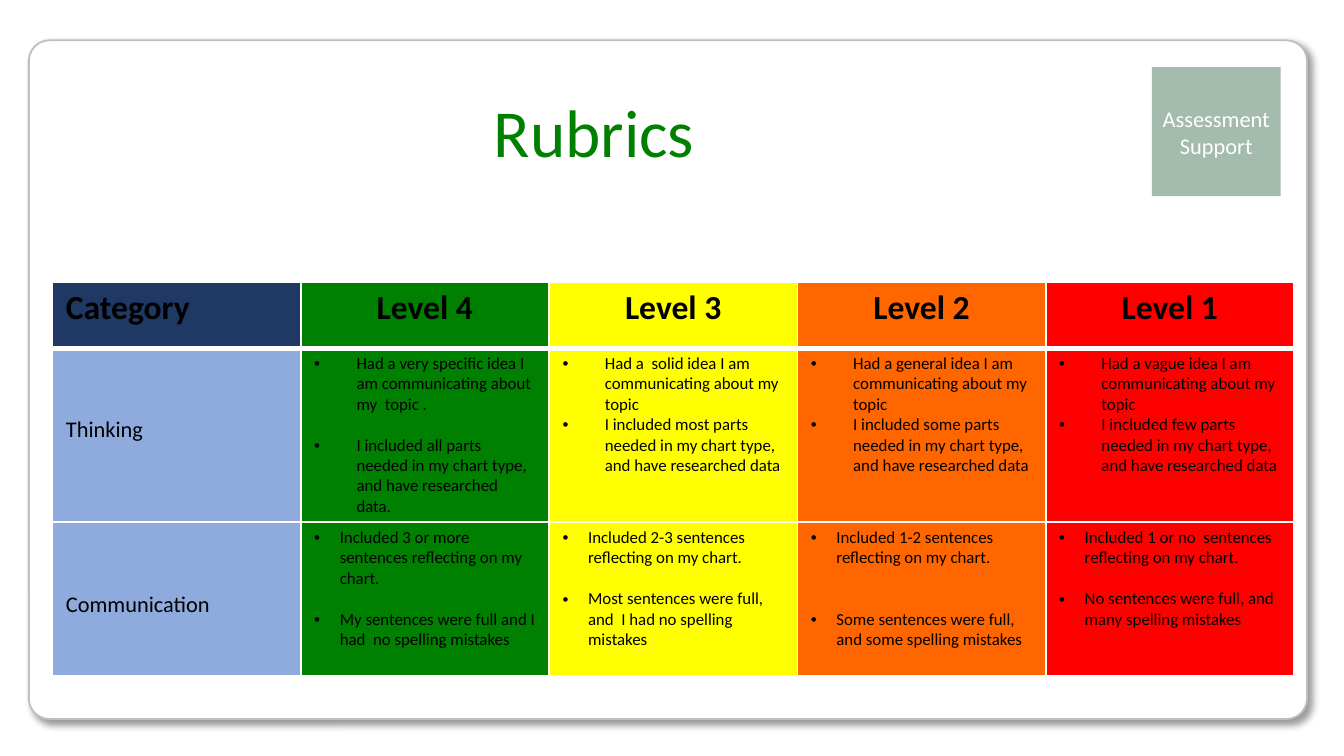
"""Build a rubric slide with a title, a support badge and a colour-coded level table."""
from dataclasses import dataclass

from lxml import etree
from pptx import Presentation
from pptx import util as u
from pptx.dml.color import RGBColor
from pptx.enum import shapes, text
from pptx.oxml.ns import qn

PX = 4572


@dataclass(frozen=True)
class Theme:
    font: str = "Calibri"
    white: str = "FFFFFF"
    black: str = "000000"
    outline: str = "BFBFBF"
    badge: str = "A3BCAD"
    title: str = "008000"
    heading: str = "203864"
    label: str = "8FAADC"
    title_size: int = 36
    heading_size: int = 18
    label_size: int = 12
    body_size: int = 9
    body_line: int = 11


@dataclass(frozen=True)
class Box:
    left: int
    top: int
    width: int
    height: int

    def emu(self) -> tuple:
        return tuple(u.Emu(n * PX) for n in (self.left, self.top, self.width, self.height))


@dataclass(frozen=True)
class Criterion:
    points: tuple
    blank_lines: int = 0


@dataclass(frozen=True)
class Level:
    name: str
    color: str
    criteria: tuple


THEME = Theme()
PAGE_WIDTH, PAGE_HEIGHT = 2000, 1125
PANEL = Box(43, 60, 1902, 1010)
BADGE = Box(1714, 100, 192, 192)
TITLE = Box(60, 124, 1648, 142)
TABLE = Box(78, 420, 1848, 564)
ROW_HEIGHTS = (98, 238, 228)
CATEGORIES = ("Thinking", "Communication")
HANGS = (63, 38)
LABEL_TOP = 102
LEVELS = (
    Level("Level 4", "008000", (
        Criterion(("Had a very specific idea I am communicating about my  topic .",
                   "I included all parts needed in my chart type, and have researched data."), 1),
        Criterion(("Included 3 or more sentences reflecting on my chart.",
                   "My sentences were full and I had  no spelling mistakes"), 1))),
    Level("Level 3", "FFFF00", (
        Criterion(("Had a  solid idea I am communicating about my  topic",
                   "I included most parts needed in my chart type, and have researched data")),
        Criterion(("Included 2-3 sentences reflecting on my chart.",
                   "Most sentences were full, and  I had no spelling mistakes"), 1))),
    Level("Level 2", "FF6600", (
        Criterion(("Had a general idea I am communicating about my  topic",
                   "I included some parts needed in my chart type, and have researched data")),
        Criterion(("Included 1-2 sentences reflecting on my chart.",
                   "Some sentences were full, and some spelling mistakes"), 2))),
    Level("Level 1", "FF0000", (
        Criterion(("Had a vague idea I am communicating about my  topic",
                   "I included few parts needed in my chart type, and have researched data")),
        Criterion(("Included 1 or no  sentences reflecting on my chart.",
                   "No sentences were full, and many spelling mistakes"), 1))),
)


def rgb(color: str) -> RGBColor:
    return RGBColor.from_string(color)


def add_element(parent, tag: str, **attributes):
    return etree.SubElement(parent, qn(tag), attributes)


def style(para, size: int, color: str, bold: bool = False, centred: bool = False) -> None:
    if centred:
        para.alignment = text.PP_ALIGN.CENTER
    for span in para.runs:
        span.font.name = THEME.font
        span.font.size = u.Pt(size)
        span.font.bold = bold
        span.font.color.rgb = rgb(color)


def set_margins(target, across: int, top: int, bottom: int) -> None:
    target.margin_left = target.margin_right = u.Emu(across * PX)
    target.margin_top = u.Emu(top * PX)
    target.margin_bottom = u.Emu(bottom * PX)


def add_shape(page, kind, box: Box, fill: str):
    shape = page.shapes.add_shape(kind, *box.emu())
    shape.shadow.inherit = False
    shape.fill.solid()
    shape.fill.fore_color.rgb = rgb(fill)
    return shape


def add_panel(page) -> None:
    panel = add_shape(page, shapes.MSO_SHAPE.ROUNDED_RECTANGLE, PANEL, THEME.white)
    panel.adjustments[0] = 0.03
    panel.line.color.rgb = rgb(THEME.outline)
    panel.line.width = u.Pt(1)
    effects = panel._element.spPr.find(qn("a:effectLst"))
    shadow = add_element(effects, "a:outerShdw", blurRad=str(u.Pt(4)), dist=str(u.Pt(3)),
                         dir="2700000", algn="tl", rotWithShape="0")
    color = add_element(shadow, "a:srgbClr", val=THEME.black)
    add_element(color, "a:alpha", val="40000")


def add_badge(page) -> None:
    badge = add_shape(page, shapes.MSO_SHAPE.RECTANGLE, BADGE, THEME.badge)
    badge.line.fill.background()
    frame = badge.text_frame
    frame.word_wrap = True
    frame.vertical_anchor = text.MSO_ANCHOR.MIDDLE
    set_margins(frame, 14, 8, 8)
    frame.text = "Assessment Support"
    style(frame.paragraphs[0], THEME.label_size, THEME.white, centred=True)


def format_title(page) -> None:
    title = page.shapes.title
    title.left, title.top, title.width, title.height = TITLE.emu()
    page.shapes._spTree.append(title._element)
    frame = title.text_frame
    frame.text = "Rubrics"
    frame.word_wrap = True
    frame.auto_size = text.MSO_AUTO_SIZE.SHAPE_TO_FIT_TEXT
    style(frame.paragraphs[0], THEME.title_size, THEME.title, centred=True)


def format_cell(cell, fill: str, row: int, top: int = 8) -> None:
    widths = {"a:lnL": 1, "a:lnR": 1, "a:lnT": 3 if row == 1 else 1, "a:lnB": 3 if row == 0 else 1}
    for tag, width in widths.items():
        line = add_element(cell._tc.get_or_add_tcPr(), tag, w=str(u.Pt(width)))
        add_element(add_element(line, "a:solidFill"), "a:srgbClr", val=THEME.white)
    cell.fill.solid()
    cell.fill.fore_color.rgb = rgb(fill)
    set_margins(cell, 20, top, 8)


def write_label(cell, label: str, size: int, bold: bool = False, centred: bool = False) -> None:
    cell.text_frame.text = label
    style(cell.text_frame.paragraphs[0], size, THEME.black, bold, centred)


def write_criterion(cell, criterion: Criterion, hang: int) -> None:
    frame = cell.text_frame
    for index, point in enumerate(criterion.points):
        para = frame.add_paragraph() if index else frame.paragraphs[0]
        para.text = point
        properties = para._p.get_or_add_pPr()
        properties.set("marL", str(hang * PX))
        properties.set("indent", str(-hang * PX))
        add_element(properties, "a:buFont", typeface="Arial")
        add_element(properties, "a:buChar", char="•")
        if index and criterion.blank_lines:
            para.space_before = u.Pt(criterion.blank_lines * THEME.body_line)
        style(para, THEME.body_size, THEME.black)


def add_rubric(page) -> None:
    table = page.shapes.add_table(len(ROW_HEIGHTS), len(LEVELS) + 1, *TABLE.emu()).table
    for row, height in zip(table.rows, ROW_HEIGHTS):
        row.height = u.Emu(height * PX)
    format_cell(table.cell(0, 0), THEME.heading, 0)
    write_label(table.cell(0, 0), "Category", THEME.heading_size, bold=True)
    for row, category in enumerate(CATEGORIES, 1):
        format_cell(table.cell(row, 0), THEME.label, row, LABEL_TOP)
        write_label(table.cell(row, 0), category, THEME.label_size)
    for column, level in enumerate(LEVELS, 1):
        format_cell(table.cell(0, column), level.color, 0)
        write_label(table.cell(0, column), level.name, THEME.heading_size, bold=True, centred=True)
        for row, (criterion, hang) in enumerate(zip(level.criteria, HANGS), 1):
            format_cell(table.cell(row, column), level.color, row)
            write_criterion(table.cell(row, column), criterion, hang)


def main() -> None:
    deck = Presentation()
    deck.slide_width, deck.slide_height = u.Emu(PAGE_WIDTH * PX), u.Emu(PAGE_HEIGHT * PX)
    page = deck.slides.add_slide(deck.slide_layouts[5])
    add_panel(page)
    add_badge(page)
    add_rubric(page)
    format_title(page)
    deck.save("out.pptx")


if __name__ == "__main__":
    main()
